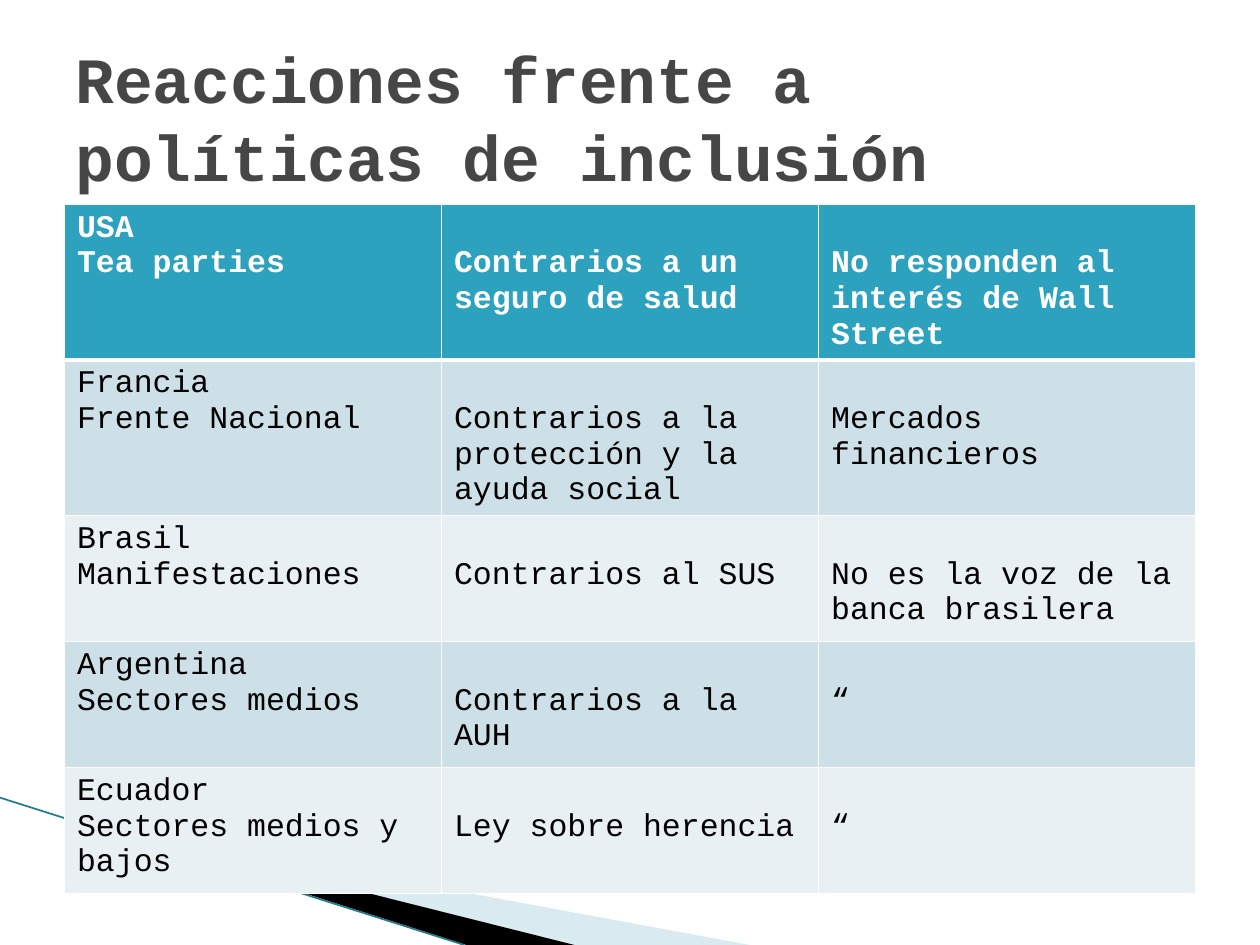
"""Build a slide with a table of reactions to inclusion policies."""
from lxml.etree import SubElement as Sub
from pptx import Presentation
from pptx.dml.color import RGBColor as Rgb
from pptx.enum.shapes import MSO_CONNECTOR as Conn
from pptx.enum.text import MSO_ANCHOR as Anchor
from pptx.oxml.ns import qn
from pptx.util import Cm, Pt

FONT = "Courier New"
HUES = {"head": "2DA2BF", "odd": "CDE0E8", "even": "E8F0F4", "white": "FFFFFF",
        "black": "000000", "title": "464646", "pale": "A0CBDC", "line": "1F7A90"}
TITLE = "Reacciones frente a políticas de inclusión"
ROWS = [
    (("USA", "Tea parties"), "Contrarios a un seguro de salud",
     "No responden al interés de Wall Street"),
    (("Francia", "Frente Nacional"),
     "Contrarios a la protección y la ayuda social", "Mercados financieros"),
    (("Brasil", "Manifestaciones"), "Contrarios al SUS",
     "No es la voz de la banca brasilera"),
    (("Argentina", "Sectores medios"), "Contrarios a la AUH", "“"),
    (("Ecuador", "Sectores medios y bajos"), "Ley sobre herencia", "“"),
]
WEDGES = [
    ("pale", 40, [(1.4, 16.52), (15.11, 19.05), (11.58, 19.05)]),
    ("black", 100, [(1.35, 16.48), (11.58, 19.05), (9.4, 19.05)]),
]
LINE = (0, 16.08, 9.36, 19.05)
WIDE, HIGH = 7.6, 2.54
INSET, DROP = 0.13, 0.72


def hue(name):
    return Rgb.from_string(HUES[name])


def style(para, size, name, bold):
    font = para.font
    font.name, font.size, font.bold = FONT, Pt(size), bold
    font.color.rgb = hue(name)


def wedge(slide, name, alpha, spots):
    spots = [(Cm(x), Cm(y)) for x, y in spots]
    build = slide.shapes.build_freeform(*spots[0])
    build.add_line_segments(spots[1:], close=True)
    shape = build.convert_to_shape()
    shape.shadow.inherit = False
    shape.line.fill.background()
    shape.fill.solid()
    shape.fill.fore_color.rgb = hue(name)
    if alpha < 100:
        tint = shape.fill._xPr.find(".//" + qn("a:srgbClr"))
        Sub(tint, qn("a:alpha"), val=str(alpha * 1000))


def edges(cell, row):
    props = cell._tc.get_or_add_tcPr()
    thick = {"L": 1, "R": 1, "T": 3 if row == 1 else 1, "B": 1 if row else 3}
    for side, size in thick.items():
        edge = Sub(props, qn("a:ln" + side), w=str(Pt(size)))
        fill = Sub(edge, qn("a:solidFill"))
        Sub(fill, qn("a:srgbClr"), val=HUES["white"])


def grid(slide):
    frame = slide.shapes.add_table(len(ROWS), 3, Cm(1.3), Cm(4.12),
                                   Cm(WIDE * 3), Cm(HIGH * len(ROWS)))
    table = frame.table
    for col in table.columns:
        col.width = Cm(WIDE)
    for r, texts in enumerate(ROWS):
        table.rows[r].height = Cm(HIGH)
        back = ("even", "odd")[r % 2] if r else "head"
        for c, text in enumerate(texts):
            cell = table.cell(r, c)
            edges(cell, r)
            cell.fill.solid()
            cell.fill.fore_color.rgb = hue(back)
            cell.margin_top = Cm(INSET + (DROP if c else 0))
            cell.margin_bottom = 0
            cell.text = text if c else "\n".join(text)
            for para in cell.text_frame.paragraphs:
                style(para, 18, "black" if r else "white", r == 0)


def main():
    deck = Presentation()
    deck.slide_width, deck.slide_height = Cm(25.4), Cm(19.05)
    slide = deck.slides.add_slide(deck.slide_layouts[6])

    for item in WEDGES:
        wedge(slide, *item)
    line = slide.shapes.add_connector(Conn.STRAIGHT, *map(Cm, LINE))
    line.line.color.rgb = hue("line")
    line.line.width = Pt(0.95)
    Sub(line._element.spPr, qn("a:effectLst"))

    box = slide.shapes.add_textbox(Cm(1.27), Cm(0.76), Cm(22.86), Cm(3.18))
    frame = box.text_frame
    frame.word_wrap = True
    frame.vertical_anchor = Anchor.MIDDLE
    frame.margin_top = frame.margin_bottom = 0
    frame.text = TITLE
    style(frame.paragraphs[0], 36.9, "title", True)

    grid(slide)
    deck.save("out.pptx")


if __name__ == "__main__":
    main()
